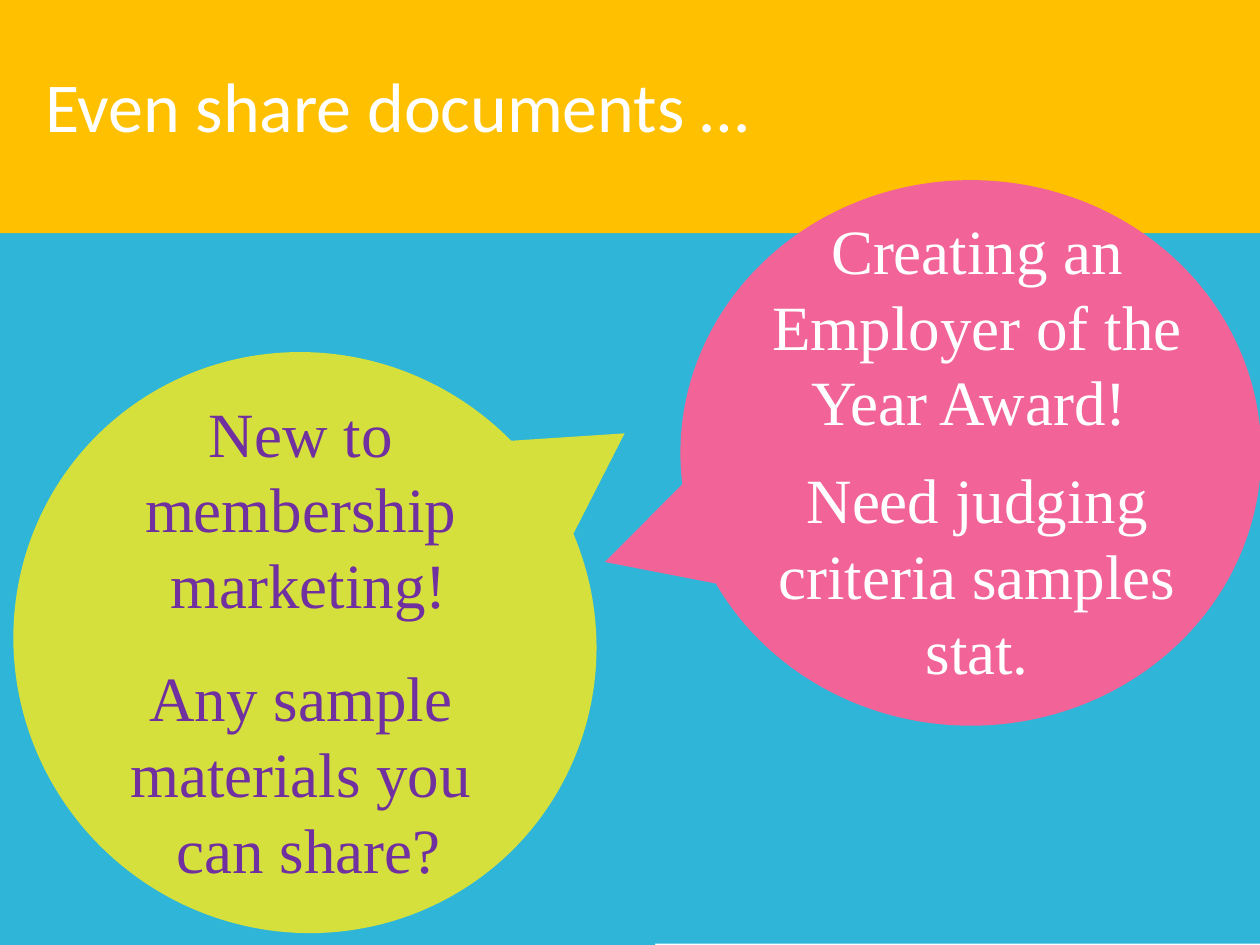
from dataclasses import dataclass

from pptx import Presentation
from pptx.dml.color import RGBColor
from pptx.enum.shapes import MSO_SHAPE
from pptx.enum.text import MSO_AUTO_SIZE, PP_ALIGN
from pptx.util import Inches, Pt

RECTANGLE = MSO_SHAPE.RECTANGLE
CALLOUT = MSO_SHAPE.OVAL_CALLOUT
LEFT, CENTER = PP_ALIGN.LEFT, PP_ALIGN.CENTER
GROW = MSO_AUTO_SIZE.SHAPE_TO_FIT_TEXT

BLUE = RGBColor(0x2F, 0xB5, 0xD8)
AMBER = RGBColor(0xFF, 0xC0, 0x00)
LIME = RGBColor(0xD5, 0xE0, 0x3C)
PINK = RGBColor(0xF2, 0x63, 0x98)
PURPLE = RGBColor(0x70, 0x30, 0xA0)
WHITE = RGBColor(0xFF, 0xFF, 0xFF)

TAIL = (-0.2, 0.63)
SPEECH_PITCH = Pt(43.2)


@dataclass(frozen=True)
class Frame:
    left: float
    top: float
    width: float
    height: float

    def lengths(self):
        return [Inches(n) for n in (self.left, self.top, self.width, self.height)]


@dataclass(frozen=True)
class Bubble:
    frame: Frame
    rotation: float
    flips: tuple[str, ...]
    fill: RGBColor
    text_frame: Frame
    text_color: RGBColor
    messages: tuple[tuple[str, ...], ...]  # each message is a group of paragraphs
    message_gap: float


PANELS = (
    (Frame(0, 1.85, 5.2, 5.65), BLUE),
    (Frame(5.1, 1.84, 4.92, 5.65), BLUE),
    (Frame(0, 0, 10, 1.85), AMBER),
)

BUBBLES = (
    Bubble(Frame(0.09, 2.81, 4.66, 4.58), 38.9, ("flipH", "flipV"), LIME,
           Frame(0.07, 3.08, 4.76, 4.04), PURPLE,
           (("New to ", "membership ", "marketing!"),
            ("Any sample ", "materials you ", "can share?")), 21.6),
    Bubble(Frame(5.54, 1.29, 4.33, 4.61), 270, ("flipV",), PINK,
           Frame(5.78, 1.63, 3.95, 3.91), WHITE,
           (("Creating an Employer of the Year Award! ",),
            ("Need judging criteria samples stat.",)), 12.6),
)


def add_filled(page, kind, frame: Frame, fill: RGBColor):
    shape = page.shapes.add_shape(kind, *frame.lengths())
    shape.shadow.inherit = False
    shape.fill.solid()
    shape.fill.fore_color.rgb = fill
    shape.line.fill.background()
    return shape


def add_text(page, messages, frame: Frame, *, size: float, font: str,
             color: RGBColor, align=LEFT, pitch=None, gap: float = 0):
    box = page.shapes.add_textbox(*frame.lengths())
    body = box.text_frame
    body.word_wrap = True
    body.auto_size = GROW
    for number, message in enumerate(messages):
        for position, text in enumerate(message):
            first = number == 0 and position == 0
            para = body.paragraphs[0] if first else body.add_paragraph()
            para.alignment = align
            if pitch is not None:
                para.line_spacing = pitch
            if number and position == 0:
                para.space_before = Pt(gap)
            span = para.add_run()
            span.text = text
            span.font.size = Pt(size)
            span.font.name = font
            span.font.color.rgb = color


def add_bubble(page, bubble: Bubble):
    shape = add_filled(page, CALLOUT, bubble.frame, bubble.fill)
    shape.adjustments[0], shape.adjustments[1] = TAIL
    shape.rotation = bubble.rotation
    for flip in bubble.flips:
        shape.element.spPr.xfrm.set(flip, "1")
    add_text(page, bubble.messages, bubble.text_frame, size=36,
             font="Times New Roman", color=bubble.text_color, align=CENTER,
             pitch=SPEECH_PITCH, gap=bubble.message_gap)


def main():
    deck = Presentation()
    deck.slide_width, deck.slide_height = Inches(10), Inches(7.5)
    page = deck.slides.add_slide(deck.slide_layouts[6])

    # Background panels and title band
    for frame, fill in PANELS:
        add_filled(page, RECTANGLE, frame, fill)
    add_text(page, (("Even share documents …",),), Frame(0.26, 0.45, 8.67, 0.77),
             size=40, font="Calibri", color=WHITE)

    # Speech bubbles
    for bubble in BUBBLES:
        add_bubble(page, bubble)

    deck.save("out.pptx")


if __name__ == "__main__":
    main()
